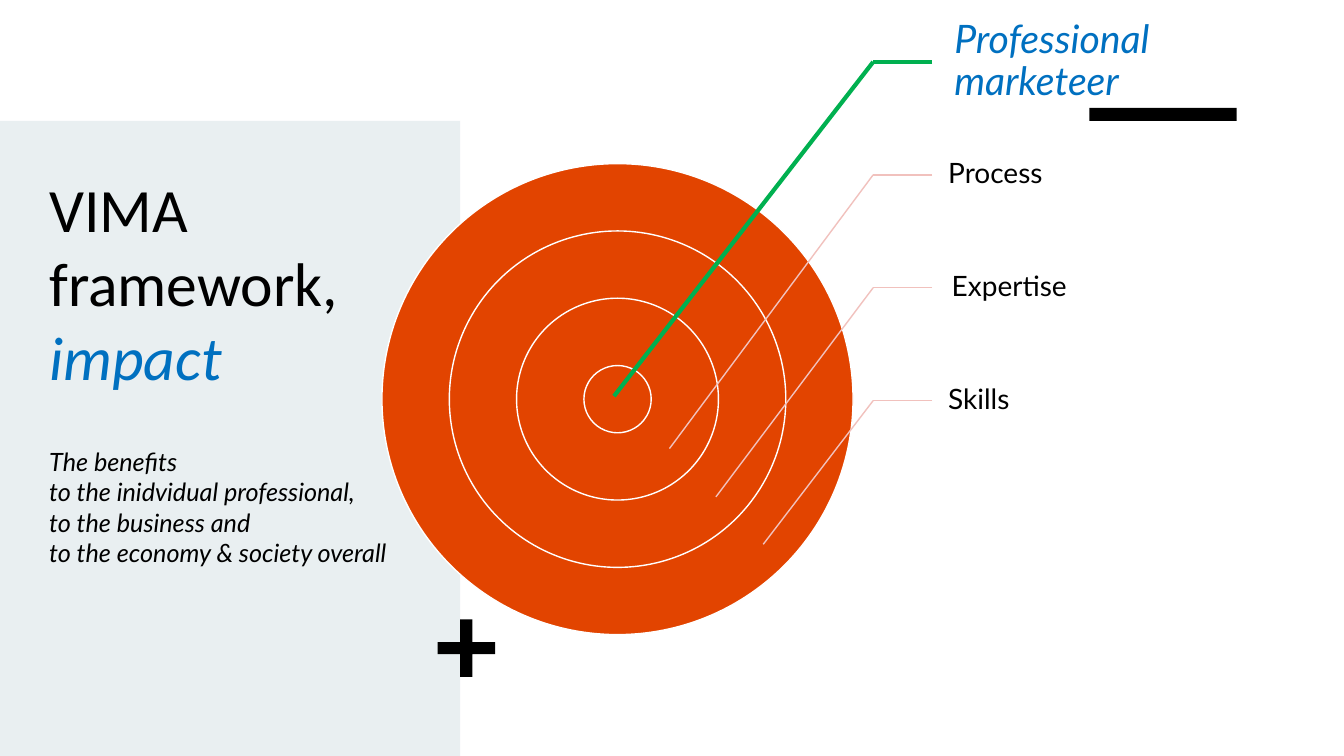
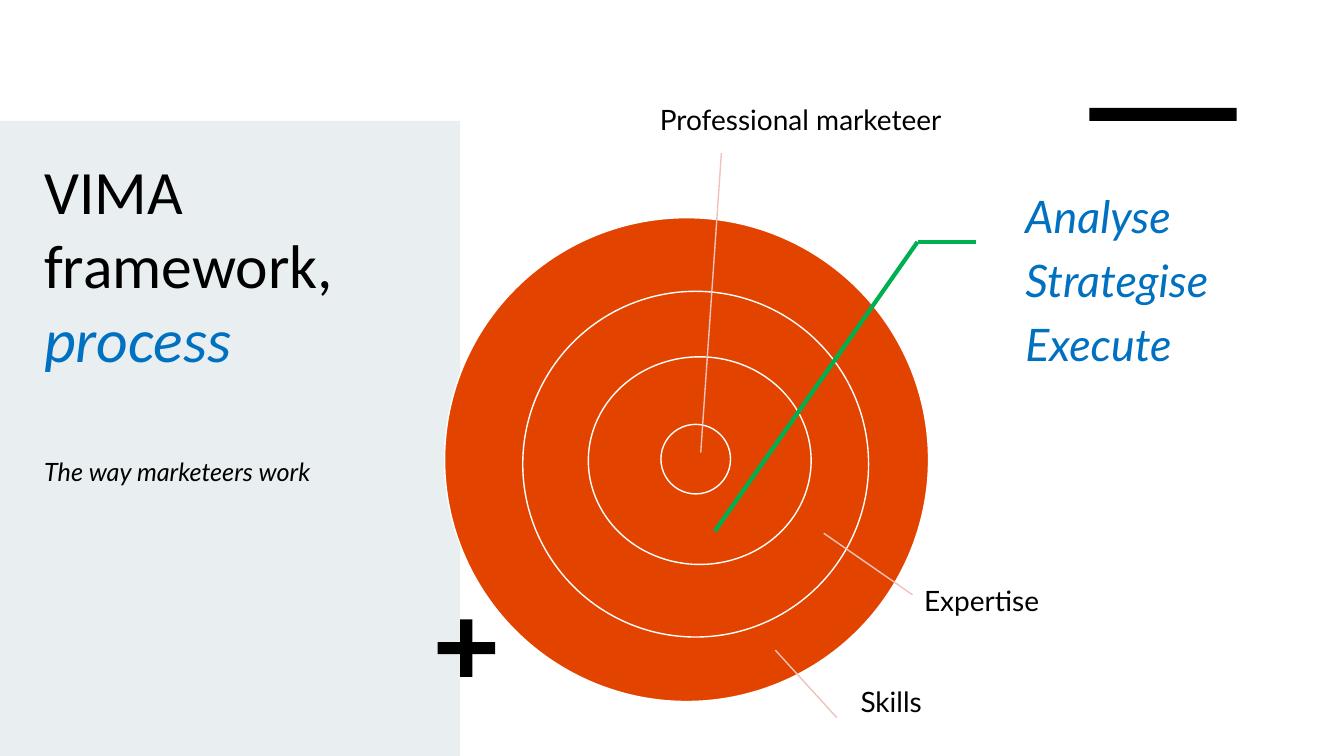
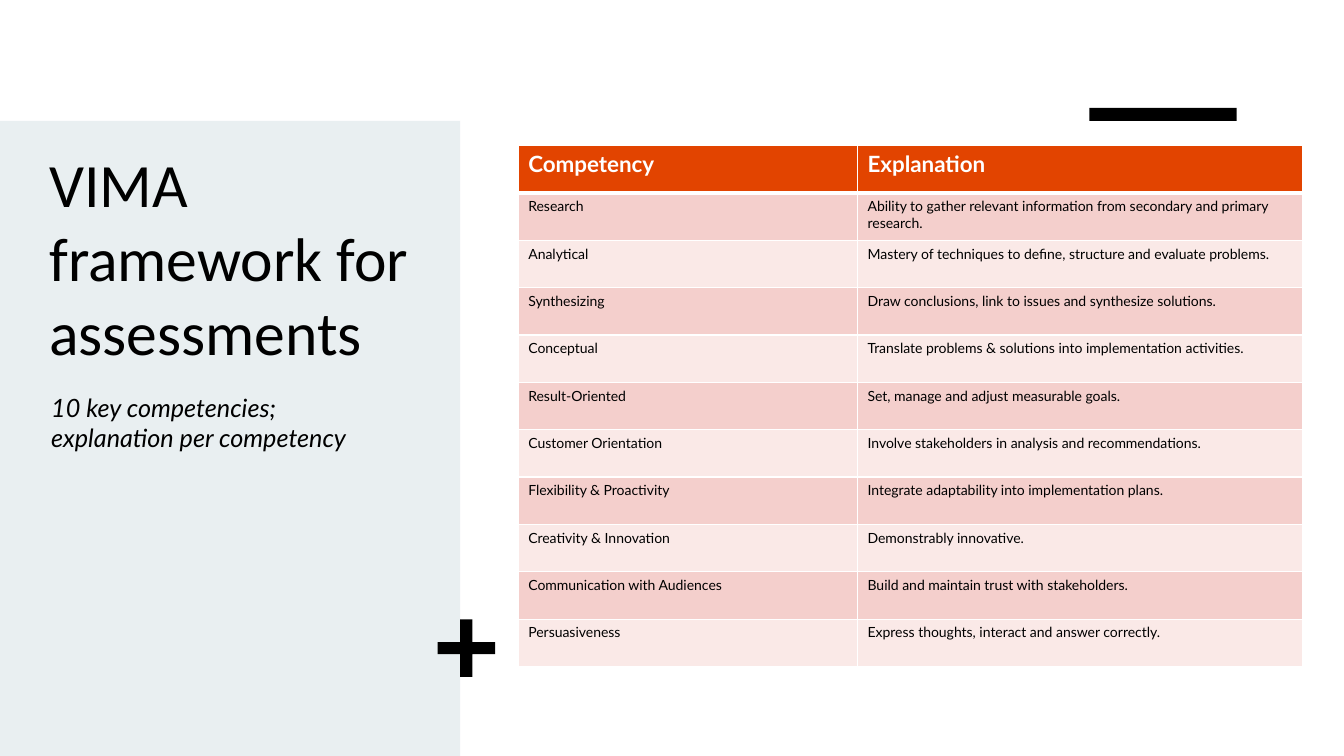
"""Build three slides on a marketing competency framework."""
from dataclasses import dataclass
from itertools import pairwise

from lxml import etree
from pptx import Presentation
from pptx import util as u
from pptx.dml.color import RGBColor
from pptx.enum import shapes, text
from pptx.oxml.ns import qn

COLORS = {
    "black": "000000", "white": "FFFFFF", "panel": "E9EFF1", "accent": "0070C0",
    "ring": "E24400", "leader": "F1C1BD", "focus": "00B050",
    "odd": "F4CFCC", "even": "FAE9E7",
}
SLIDE_W, SLIDE_H = u.Inches(13.33), u.Inches(7.5)
CELL = SLIDE_H / 30
BODY, HEADING = "Lato", "Calibri"
PAD = (0.4, 0.2, 0.4, 0.2)
Point = tuple[float, float]


@dataclass(frozen=True)
class Box:
    """Rectangle in grid columns and rows."""
    col: float
    row: float
    cols: float
    rows: float

    def emu(self) -> list[int]:
        """Return the rectangle in slide units."""
        return [grid(n) for n in (self.col, self.row, self.cols, self.rows)]


@dataclass(frozen=True)
class Run:
    """Text with its look."""
    words: str
    size: float
    color: str = "black"
    italic: bool = False
    bold: bool = False
    font: str = BODY


@dataclass(frozen=True)
class Label:
    """Callout lines naming a ring."""
    box: Box
    lines: tuple[str, ...]
    size: float = 20
    indent: float = 0.64
    focus: bool = False
    anchor: text.MSO_ANCHOR = text.MSO_ANCHOR.MIDDLE


@dataclass(frozen=True)
class Leader:
    """Line through points, from label to ring."""
    points: tuple[Point, ...]
    focus: bool = False


@dataclass(frozen=True)
class Page:
    """Left panel content of a slide."""
    title_box: Box
    title: str
    emphasis: str
    note_box: Box
    note: tuple[str, ...]


def grid(n: float) -> int:
    """Convert grid cells to slide units."""
    return round(n * CELL)


def rgb(name: str) -> RGBColor:
    """Look up a colour."""
    return RGBColor.from_string(COLORS[name])


def add_run(p, run: Run) -> None:
    """Append one run to a paragraph."""
    r = p.add_run()
    r.text = run.words
    f = r.font
    f.size, f.name, f.bold, f.italic = u.Pt(run.size), run.font, run.bold, run.italic
    f.color.rgb = rgb(run.color)


def add_text(s, box: Box, paragraphs: list[list[Run]], pad=PAD,
             anchor=text.MSO_ANCHOR.TOP):
    """Add a wrapped text box and return its frame."""
    tf = s.shapes.add_textbox(*box.emu()).text_frame
    tf.word_wrap, tf.vertical_anchor = True, anchor
    tf.margin_left, tf.margin_top, tf.margin_right, tf.margin_bottom = map(grid, pad)
    for i, runs in enumerate(paragraphs):
        p = tf.add_paragraph() if i else tf.paragraphs[0]
        for run in runs:
            add_run(p, run)
    return tf


def add_title(s, page: Page) -> None:
    """Add the title, with its emphasis on a line of its own."""
    tf = add_text(s, page.title_box, [[Run(page.title, 44, font=HEADING)]])
    if page.emphasis:
        p = tf.paragraphs[0]
        p.add_line_break()
        add_run(p, Run(page.emphasis, 44, "accent", True, font=HEADING))


def add_shape(s, kind: shapes.MSO_SHAPE, box: Box, fill: str, line: str = ""):
    """Add a flat preset shape."""
    sp = s.shapes.add_shape(kind, *box.emu())
    sp.shadow.inherit = False
    sp.fill.solid()
    sp.fill.fore_color.rgb = rgb(fill)
    if line:
        sp.line.color.rgb, sp.line.width = rgb(line), u.Pt(1)
    else:
        sp.line.fill.background()
    return sp


def add_leader(s, leader: Leader) -> None:
    """Join the leader's points with straight connectors."""
    for start, end in pairwise(leader.points):
        c = s.shapes.add_connector(shapes.MSO_CONNECTOR.STRAIGHT,
                                   *map(grid, start + end))
        c.line.color.rgb = rgb("focus" if leader.focus else "leader")
        c.line.width = u.Pt(3 if leader.focus else 1)
        etree.SubElement(c._element.spPr, qn("a:effectLst"))


def add_label(s, label: Label) -> None:
    """Add a callout label."""
    color = "accent" if label.focus else "black"
    tf = add_text(s, label.box,
                  [[Run(words, label.size, color, label.focus)] for words in label.lines],
                  (label.indent, 0.14, 0.14, 0.14), label.anchor)
    for p in tf.paragraphs:
        p.line_spacing, p.space_after = 0.9, u.Pt(0.35 * label.size)


def add_page(prs, page: Page):
    """Add a slide with panel, title, note and ornaments."""
    s = prs.slides.add_slide(prs.slide_layouts[6])
    add_shape(s, shapes.MSO_SHAPE.RECTANGLE, Box(0, 4.8, 18.26, 25.2), "panel")
    add_title(s, page)
    add_shape(s, shapes.MSO_SHAPE.RECTANGLE, Box(43.22, 4.28, 5.84, 0.52), "black")
    plus = add_shape(s, shapes.MSO_SHAPE.CROSS, Box(17.36, 24.58, 2.28, 2.28), "black")
    plus.adjustments[0] = 0.395
    add_text(s, page.note_box, [[Run(words, 18, italic=True)] for words in page.note])
    return s


def add_target(s, rings: list[Box], labels: list[Label], leaders: list[Leader]) -> None:
    """Draw rings with their labels and leaders."""
    for ring in rings:
        add_shape(s, shapes.MSO_SHAPE.OVAL, ring, "ring", "white")
    for label in labels:
        add_label(s, label)
    for leader in leaders:
        add_leader(s, leader)


def set_borders(cell, bottom: float) -> None:
    """Give a cell white borders."""
    pr = cell._tc.get_or_add_tcPr()
    for i, side in enumerate(("lnL", "lnR", "lnT", "lnB")):
        width = u.Pt(bottom if side == "lnB" else 1)
        ln = etree.Element(qn(f"a:{side}"), w=str(int(width)))
        fill = etree.SubElement(ln, qn("a:solidFill"))
        etree.SubElement(fill, qn("a:srgbClr"), val=COLORS["white"])
        pr.insert(i, ln)


def add_competencies(s, rows: list[tuple[str, str]]) -> None:
    """Add the banded table of competencies."""
    widths = (13.46, 17.66)
    box = Box(20.56, 5.76, sum(widths), 20.72)
    table = s.shapes.add_table(len(rows), len(widths), *box.emu()).table
    for column, width in zip(table.columns, widths):
        column.width = grid(width)
    for i, row in enumerate(rows):
        head = i == 0
        table.rows[i].height = grid(1.9 if head else 1.88)
        for j, words in enumerate(row):
            cell = table.cell(i, j)
            cell.fill.solid()
            cell.fill.fore_color.rgb = rgb("ring" if head else "odd" if i % 2 else "even")
            set_borders(cell, 3 if head else 1)
            run = Run(words, 16, "white", bold=True) if head else Run(words, 10)
            add_run(cell.text_frame.paragraphs[0], run)


IMPACT = Page(
    Box(1.56, 6.6, 16.68, 17.6), "VIMA framework,", "impact",
    Box(1.56, 17.52, 15.04, 5.24),
    ("The benefits", "to the inidvidual professional,", "to the business and",
     "to the economy & society overall"))
PROCESS = Page(
    Box(1.36, 5.88, 17.6, 17.6), "VIMA framework,", "process",
    Box(1.36, 17.92, 15.2, 1.6), ("The way marketeers work",))
ASSESSMENTS = Page(
    Box(1.56, 5.6, 16.68, 17.6), "VIMA framework for assessments", "",
    Box(1.64, 15.36, 13.48, 2.84),
    ("10 key competencies;", "explanation per competency"))

RING_NAMES = ("Professional marketeer", "Process", "Expertise", "Skills")
RING_TIPS = ((24.36, 15.72), (26.56, 17.8), (28.4, 19.72), (30.28, 21.6))
COMPETENCIES = [
    ("Competency", "Explanation"),
    ("Research",
     "Ability to gather relevant information from secondary and primary research."),
    ("Analytical", "Mastery of techniques to define, structure and evaluate problems."),
    ("Synthesizing", "Draw conclusions, link to issues and synthesize solutions."),
    ("Conceptual", "Translate problems & solutions into implementation activities."),
    ("Result-Oriented", "Set, manage and adjust measurable goals."),
    ("Customer Orientation", "Involve stakeholders in analysis and recommendations."),
    ("Flexibility & Proactivity", "Integrate adaptability into implementation plans."),
    ("Creativity & Innovation", "Demonstrably innovative."),
    ("Communication with Audiences", "Build and maintain trust with stakeholders."),
    ("Persuasiveness", "Express thoughts, interact and answer correctly."),
]


def impact_slide(prs) -> None:
    """Build the slide on impact."""
    step, labels, leaders = 4.48, [], []
    for i, (name, tip) in enumerate(zip(RING_NAMES, RING_TIPS)):
        focus, y = i == 0, 2.46 + step * i
        box = Box(37.12 if name == "Expertise" else 36.98, 0.2 + step * i, 9.36, 4.48)
        labels.append(Label(box, (name,), 28 if focus else 20,
                            0.88 if focus else 0.64, focus))
        leaders.append(Leader(((36.98, y), (34.64, y), tip), focus))
    rings = [Box(24.5 - d / 2, 15.84 - d / 2, d, d)
             for d in (2.67 * n for n in (7, 5, 3, 1))]
    add_target(add_page(prs, IMPACT), rings, labels, leaders)


def process_slide(prs) -> None:
    """Build the slide on process."""
    rings = [Box(17.64, 8.64, 19.2, 19.2), Box(20.74, 11.56, 13.72, 13.72),
             Box(23.34, 14.16, 8.84, 8.24), Box(26.22, 16.84, 2.76, 2.76)]
    labels = [
        Label(Box(25.54, 3.64, 13, 2.32), ("Professional marketeer",)),
        Label(Box(39.68, 7.6, 12.92, 8), ("Analyse", "Strategise", "Execute"),
              32, 1, True, text.MSO_ANCHOR.TOP),
        Label(Box(36.02, 22.92, 5.88, 1.96), ("Expertise",)),
        Label(Box(33.5, 26.92, 5.88, 1.96), ("Skills",)),
    ]
    leaders = [
        Leader(((28.62, 6.08), (27.8, 17.96))),
        Leader(((38.74, 9.6), (36.4, 9.6), (28.36, 21.08)), True),
        Leader(((32.68, 21.16), (36.2, 23.6))),
        Leader(((30.76, 25.8), (33.2, 28.48))),
    ]
    add_target(add_page(prs, PROCESS), rings, labels, leaders)


def main() -> None:
    """Build and save the slides."""
    prs = Presentation()
    prs.slide_width, prs.slide_height = SLIDE_W, SLIDE_H
    impact_slide(prs)
    process_slide(prs)
    add_competencies(add_page(prs, ASSESSMENTS), COMPETENCIES)
    prs.save("out.pptx")


if __name__ == "__main__":
    main()
